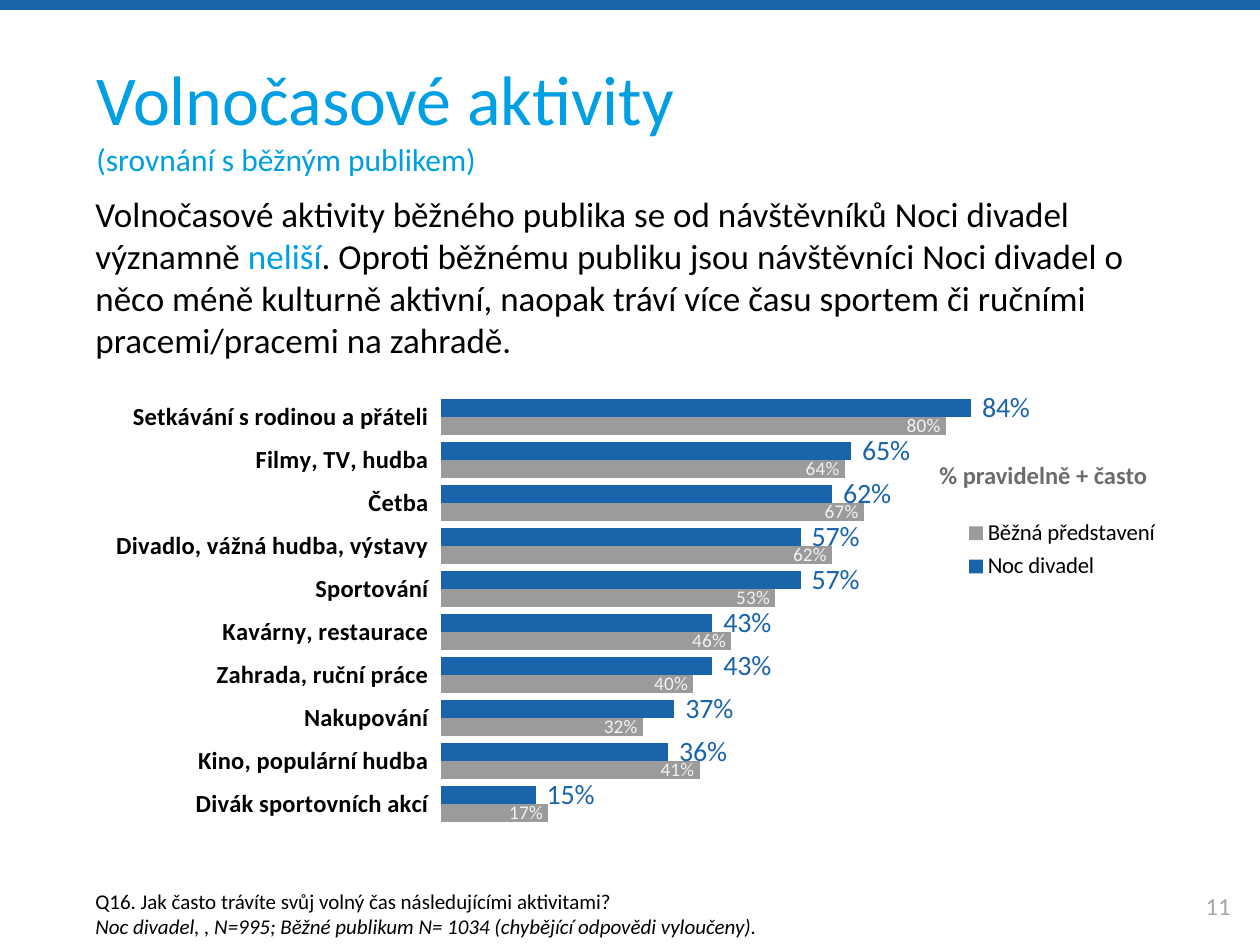
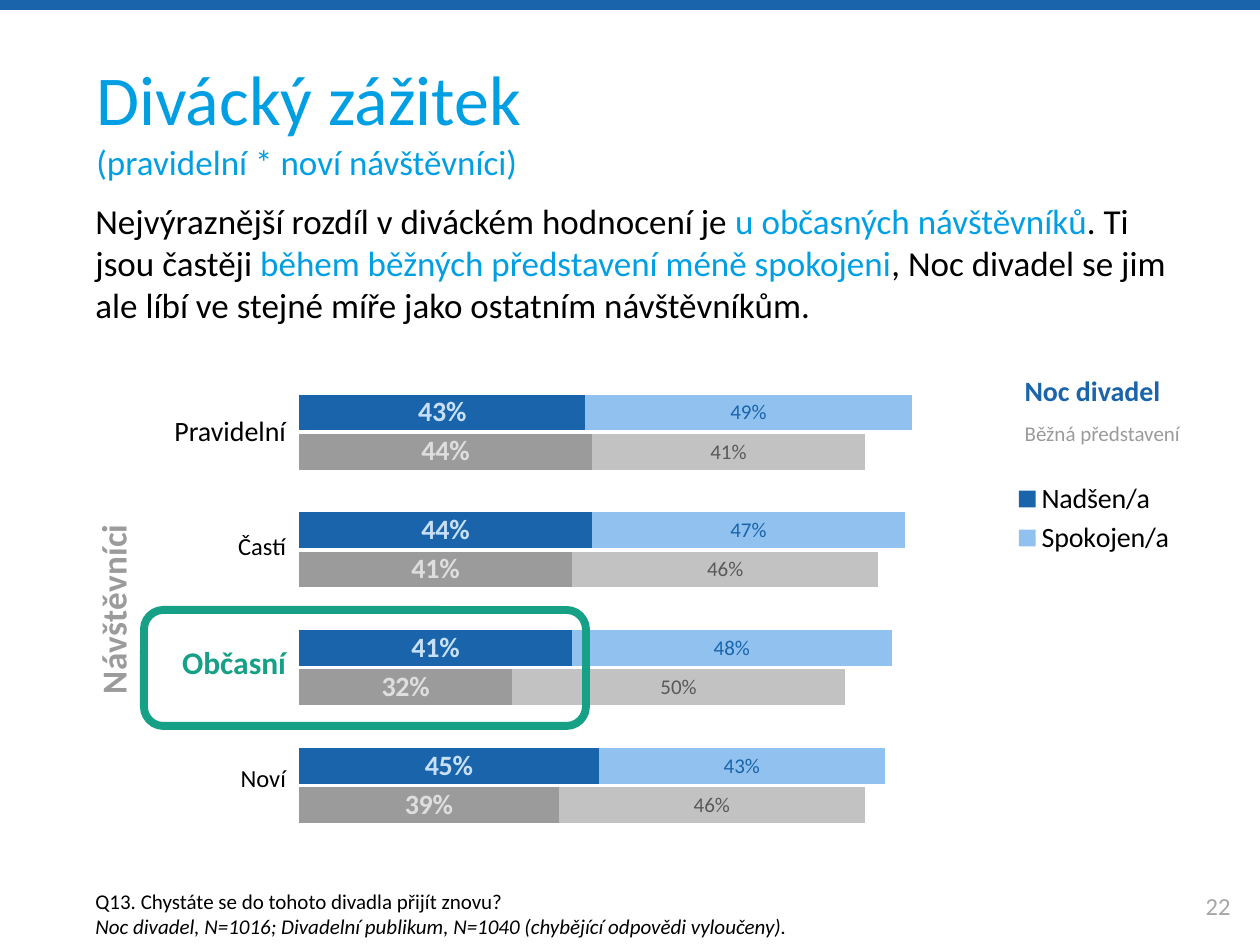
from typing import NamedTuple, Optional

import pptx
import pptx.chart.data
import pptx.dml.color
import pptx.enum.chart
import pptx.enum.shapes
import pptx.enum.text
import pptx.oxml
import pptx.oxml.ns
import pptx.util

EMU_PER_PX = 914400 / 126
FONT = "Calibri"
NO_GRID_STYLE = "{2D5ABB26-0587-4C30-8999-92F81FD0307C}"
COLORS = {
    "band": "1964AA", "accent": "009FE3", "text": "000000", "page": "A6A6A6",
    "gray": "9B9B9B", "light_gray": "C2C2C2", "light_blue": "91C2EF",
    "note": "6C6C6C", "green": "16A085", "pale_blue": "C8E0F7",
    "pale_gray": "DEDEDE", "dark_gray": "595959", "near_white": "F2F2F2",
}

ALIGN = pptx.enum.text.PP_ALIGN
ANCHOR = pptx.enum.text.MSO_ANCHOR
SHAPE = pptx.enum.shapes.MSO_SHAPE
CHART = pptx.enum.chart.XL_CHART_TYPE
LABEL = pptx.enum.chart.XL_LABEL_POSITION
LEGEND = pptx.enum.chart.XL_LEGEND_POSITION


class Box(NamedTuple):
    x: int
    y: int
    w: int
    h: int

    def emu(self) -> list:
        return [px(v) for v in self]


class Run(NamedTuple):
    text: str
    fmt: dict = {}


class Series(NamedTuple):
    name: str
    values: list
    color: str
    label: dict
    label_pos: object
    alt_color: Optional[str] = None
    alt_label: Optional[str] = None


class ChartSpec(NamedTuple):
    kind: object
    box: Box
    plot: Box
    legend: Box
    legend_pos: object
    legend_size: int
    categories: list
    series: list
    number_format: str
    gap: int
    overlap: int
    maximum: float
    size: float


class Frame(NamedTuple):
    title: str
    subtitle: Run
    title_h: int
    body: Box
    body_runs: list
    note: Box
    question: str
    sample: str
    number: str


def px(v: int) -> int:
    return pptx.util.Emu(round(v * EMU_PER_PX))


def rgb(name: str) -> pptx.dml.color.RGBColor:
    return pptx.dml.color.RGBColor.from_string(COLORS[name])


def style(font, fmt: dict) -> None:
    """Apply format values; size is in points and color is a palette name."""
    for key, value in {"name": FONT, "color": "text", **fmt}.items():
        if key == "color":
            font.color.rgb = rgb(value)
        else:
            setattr(font, key, pptx.util.Pt(value) if key == "size" else value)


def add_runs(p, runs: list, base: dict) -> None:
    for run in runs:
        r = p.add_run()
        r.text = run.text
        style(r.font, {**base, **run.fmt})


def add_text(s, box: Box, paragraphs: list, base: dict, **frame):
    sp = s.shapes.add_textbox(*box.emu())
    tf = sp.text_frame
    for key, value in {"word_wrap": True, **frame}.items():
        setattr(tf, key, value)
    for i, runs in enumerate(paragraphs):
        p = tf.add_paragraph() if i else tf.paragraphs[0]
        add_runs(p, runs, base)
    return sp


def add_shape(s, kind, box: Box):
    sp = s.shapes.add_shape(kind, *box.emu())
    sp.shadow.inherit = False
    return sp


def add_frame(s, frame: Frame) -> None:
    """Draw what both slides share: band, title, body, footnote, number."""
    band = add_shape(s, SHAPE.RECTANGLE, Box(0, 0, 1260, 10))
    band.fill.solid()
    band.fill.fore_color.rgb = rgb("band")
    band.line.fill.background()

    title = add_text(s, Box(84, 50, 1092, frame.title_h), [[Run(frame.title)]],
                     {"size": 40, "color": "accent"}, margin_top=px(10))
    p = title.text_frame.paragraphs[0]
    p.line_spacing = 0.98
    p.add_line_break()
    add_runs(p, [frame.subtitle], {"color": "accent"})

    add_text(s, frame.body, [frame.body_runs], {"size": 20})
    add_text(s, frame.note, [[Run(frame.question)], [Run(frame.sample, {"italic": True})]],
             {"size": 12}, vertical_anchor=ANCHOR.BOTTOM)
    number = add_text(s, Box(1176, 881, 84, 50), [[Run(frame.number)]],
                      {"size": 14, "color": "page"}, vertical_anchor=ANCHOR.MIDDLE)
    number.text_frame.paragraphs[0].alignment = ALIGN.CENTER


def set_layout(parent, box: Box, chart_box: Box, inner: bool = False, sized: bool = True) -> None:
    """Place a chart part at a slide position given in px."""
    qn = pptx.oxml.ns.qn
    for old in parent.findall(qn("c:layout")):
        parent.remove(old)
    values = {"x": (box.x - chart_box.x) / chart_box.w, "y": (box.y - chart_box.y) / chart_box.h}
    if sized:
        values.update(w=box.w / chart_box.w, h=box.h / chart_box.h)
    target = '<c:layoutTarget val="inner"/>' if inner else ""
    modes = '<c:xMode val="edge"/><c:yMode val="edge"/>'
    places = "".join(f'<c:{k} val="{v:.4f}"/>' for k, v in values.items())
    layout = pptx.oxml.parse_xml(
        f'<c:layout {pptx.oxml.ns.nsdecls("c")}><c:manualLayout>'
        f"{target}{modes}{places}</c:manualLayout></c:layout>")
    before = {qn("c:legendPos"), qn("c:legendEntry"), qn("c:tx")}
    parent.insert(sum(child.tag in before for child in parent), layout)


def color_series(ser, spec: Series) -> None:
    ser.invert_if_negative = False
    ser.format.fill.solid()
    ser.format.fill.fore_color.rgb = rgb(spec.color)
    if spec.alt_color is None:
        return
    for i in range(1, len(spec.values), 3):
        point = ser.points[i]
        point.format.fill.solid()
        point.format.fill.fore_color.rgb = rgb(spec.alt_color)
        style(point.data_label.font, {**spec.label, "color": spec.alt_label})
        point.data_label.position = spec.label_pos


def add_bars(s, spec: ChartSpec):
    data = pptx.chart.data.CategoryChartData(number_format="0%")
    data.categories = spec.categories
    for ser in spec.series:
        data.add_series(ser.name, ser.values)
    chart = s.shapes.add_chart(spec.kind, *spec.box.emu(), data).chart
    chart.has_title = False
    style(chart.font, {"size": spec.size})
    chart.has_legend = True
    chart.legend.position = spec.legend_pos
    chart.legend.include_in_layout = False
    style(chart.legend.font, {"size": spec.legend_size})
    set_layout(chart.legend._element, spec.legend, spec.box)

    plot = chart.plots[0]
    plot.gap_width, plot.overlap, plot.vary_by_categories = spec.gap, spec.overlap, False
    set_layout(plot._element.getparent(), spec.plot, spec.box, inner=True)
    for ser, ser_spec in zip(plot.series, spec.series):
        labels = ser.data_labels
        labels.show_value = True
        labels.number_format = spec.number_format
        labels.number_format_is_linked = False
        labels.position = ser_spec.label_pos
        style(labels.font, ser_spec.label)
        color_series(ser, ser_spec)

    axis = chart.category_axis
    axis.reverse_order = True
    axis.format.line.fill.background()
    value_axis = chart.value_axis
    value_axis.minimum_scale, value_axis.maximum_scale = 0, spec.maximum
    value_axis.has_major_gridlines = False
    value_axis.visible = False
    return chart


def add_label_table(s, box: Box, heights: list, rows: list, align, **margins) -> None:
    """Draw a one-column table without fill or grid."""
    shape = s.shapes.add_table(len(rows), 1, *box.emu())
    table = shape.table
    table.first_row = table.horz_banding = False
    table._tbl.tblPr.find(pptx.oxml.ns.qn("a:tableStyleId")).text = NO_GRID_STYLE
    for i, (height, run) in enumerate(zip(heights, rows)):
        table.rows[i].height = px(height)
        cell = table.cell(i, 0)
        cell.fill.background()
        cell.vertical_anchor = ANCHOR.MIDDLE
        for key, value in margins.items():
            setattr(cell, key, px(value))
        p = cell.text_frame.paragraphs[0]
        p.alignment = align
        add_runs(p, [run], {})


def leisure_slide(s) -> None:
    add_frame(s, Frame(
        "Volnočasové aktivity", Run("(srovnání s běžným publikem)", {"size": 18}), 103,
        Box(83, 186, 1105, 183),
        [Run("Volnočasové aktivity běžného publika se od návštěvníků Noci divadel významně "),
         Run("neliší", {"color": "accent"}),
         Run(". Oproti běžnému publiku jsou návštěvníci Noci divadel o něco méně kulturně "
             "aktivní, naopak tráví více času sportem či ručními pracemi/pracemi na zahradě.")],
        Box(83, 882, 694, 63),
        "Q16. Jak často trávíte svůj volný čas následujícími aktivitami?",
        "Noc divadel, , N=995; Běžné publikum N= 1034 (chybějící odpovědi vyloučeny).", "11"))
    chart = add_bars(s, ChartSpec(
        CHART.BAR_CLUSTERED, Box(89, 323, 1091, 517), Box(441, 396, 568, 430),
        Box(962, 514, 200, 72), LEGEND.TOP, 13,
        ["Setkávání s rodinou a přáteli", "Filmy, TV, hudba", "Četba",
         "Divadlo, vážná hudba, výstavy", "Sportování", "Kavárny, restaurace",
         "Zahrada, ruční práce", "Nakupování", "Kino, populární hudba",
         "Divák sportovních akcí"],
        [Series("Noc divadel", [0.84, 0.65, 0.62, 0.57, 0.57, 0.43, 0.43, 0.37, 0.36, 0.15],
                "band", {"size": 16, "color": "band"}, LABEL.OUTSIDE_END),
         Series("Běžná představení", [0.8, 0.64, 0.67, 0.62, 0.53, 0.46, 0.4, 0.32, 0.41, 0.17],
                "gray", {"size": 11, "color": "near_white"}, LABEL.INSIDE_END)],
        r"[>0.015]\ 0%;;", 40, 0, 0.9, 10.5))
    style(chart.category_axis.tick_labels.font, {"size": 14, "bold": True})
    add_text(s, Box(927, 454, 238, 43), [[Run("% pravidelně + často")]],
             {"size": 14, "bold": True, "color": "note"})


def experience_slide(s) -> None:
    add_frame(s, Frame(
        "Divácký zážitek", Run("(pravidelní * noví návštěvníci)", {"size": 20}), 198,
        Box(83, 193, 1105, 140),
        [Run("Nejvýraznější rozdíl v diváckém hodnocení je "),
         Run("u občasných návštěvníků", {"color": "accent"}),
         Run(". Ti jsou častěji "),
         Run("během běžných představení méně spokojeni", {"color": "accent"}),
         Run(", Noc divadel se jim ale líbí ve stejné míře jako ostatním návštěvníkům.")],
        Box(83, 882, 724, 63),
        "Q13. Chystáte se do tohoto divadla přijít znovu?",
        "Noc divadel, N=1016; Divadelní publikum, N=1040 (chybějící odpovědi vyloučeny).", "22"))
    box = Box(81, 368, 1133, 474)
    chart = add_bars(s, ChartSpec(
        CHART.BAR_STACKED, box, Box(299, 393, 666, 432), Box(1009, 477, 170, 83),
        LEGEND.RIGHT, 16, [str(i) for i in range(1, 12)],
        [Series("Nadšen/a", [0.43, 0.44, None, 0.44, 0.41, None, 0.41, 0.32, None, 0.45, 0.39],
                "band", {"size": 16, "bold": True, "color": "pale_blue"}, LABEL.CENTER,
                "gray", "pale_gray"),
         Series("Spokojen/a", [0.49, 0.41, None, 0.47, 0.46, None, 0.48, 0.5, None, 0.43, 0.46],
                "light_blue", {"size": 12, "color": "band"}, LABEL.CENTER,
                "light_gray", "dark_gray")],
        "0%", 10, 100, 1, 14))
    axis = chart.category_axis
    axis.tick_label_position = pptx.enum.chart.XL_TICK_LABEL_POSITION.NONE
    title = axis.axis_title
    add_runs(title.text_frame.paragraphs[0], [Run("Návštěvníci")],
             {"size": 20, "bold": True, "color": "gray"})
    body = title._element.find(".//" + pptx.oxml.ns.qn("a:bodyPr"))
    body.set("rot", "-5400000")
    body.set("vert", "horz")
    set_layout(title._element, Box(82, 518, 0, 0), box, sized=False)

    highlight = add_shape(s, SHAPE.ROUNDED_RECTANGLE, Box(144, 610, 442, 116))
    highlight.fill.background()
    highlight.line.color.rgb = rgb("green")
    highlight.line.width = pptx.util.Pt(4.5)

    add_label_table(s, Box(1012, 368, 200, 84), [47, 37],
                    [Run("Noc divadel", {"size": 16, "bold": True, "color": "band"}),
                     Run("Běžná představení", {"size": 12, "color": "gray"})], ALIGN.LEFT)
    add_label_table(s, Box(151, 373, 136, 464), [116] * 4,
                    [Run("Pravidelní", {"size": 16}), Run("Častí", {"size": 14}),
                     Run("Občasní", {"size": 18, "bold": True, "color": "green"}),
                     Run("Noví", {"size": 14})], ALIGN.RIGHT,
                    margin_left=1, margin_top=1, margin_right=1, margin_bottom=0)


def main() -> None:
    prs = pptx.Presentation()
    prs.slide_width, prs.slide_height = px(1260), px(945)
    for build in (leisure_slide, experience_slide):
        build(prs.slides.add_slide(prs.slide_layouts[6]))
    prs.save("out.pptx")


if __name__ == "__main__":
    main()
